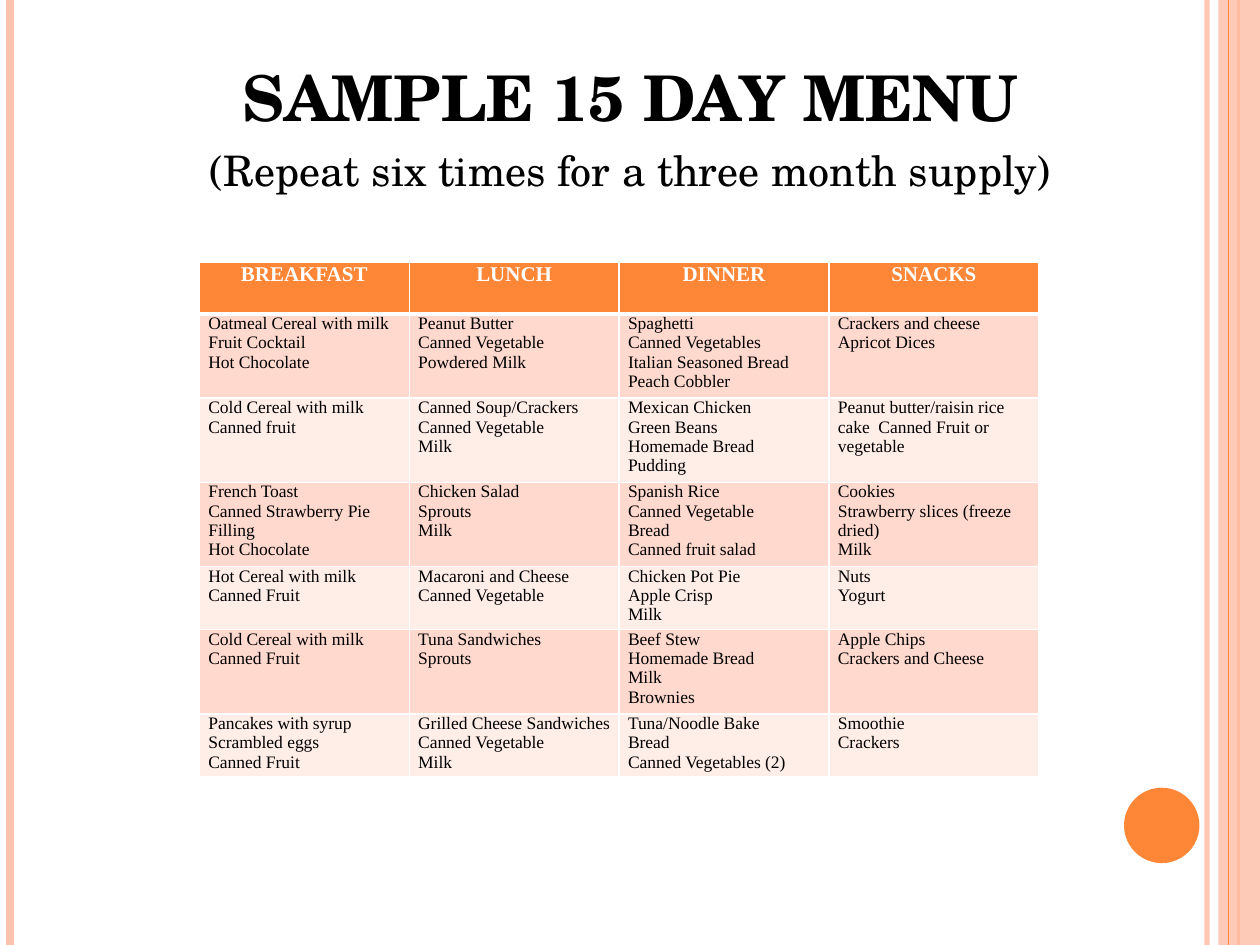
from lxml.etree import SubElement
from pptx import Presentation
from pptx.dml.color import RGBColor
from pptx.enum.shapes import MSO_CONNECTOR, MSO_SHAPE
from pptx.enum.text import PP_ALIGN
from pptx.oxml import parse_xml
from pptx.oxml.ns import nsdecls, qn
from pptx.util import Cm, Pt

HUES = {"orange": "FE8637", "peach": "FEC3AE", "dark": "FFD9CE",
        "light": "FFEDE8", "white": "FFFFFF", "black": "000000"}
HEADS = ["BREAKFAST", "LUNCH", "DINNER", "SNACKS"]
MEALS = [
    ["Oatmeal Cereal with milk|Fruit Cocktail|Hot Chocolate",
     "Peanut Butter|Canned Vegetable|Powdered Milk",
     "Spaghetti|Canned Vegetables|Italian Seasoned Bread|Peach Cobbler",
     "Crackers and cheese|Apricot Dices"],
    ["Cold Cereal with milk|Canned fruit",
     "Canned Soup/Crackers|Canned Vegetable|Milk",
     "Mexican Chicken|Green Beans|Homemade Bread|Pudding",
     "Peanut butter/raisin rice cake  Canned Fruit or vegetable"],
    ["French Toast|Canned Strawberry Pie Filling|Hot Chocolate",
     "Chicken Salad|Sprouts|Milk",
     "Spanish Rice|Canned Vegetable|Bread|Canned fruit salad",
     "Cookies|Strawberry slices (freeze dried)|Milk"],
    ["Hot Cereal with milk|Canned Fruit",
     "Macaroni and Cheese|Canned Vegetable",
     "Chicken Pot Pie|Apple Crisp|Milk",
     "Nuts|Yogurt"],
    ["Cold Cereal with milk|Canned Fruit",
     "Tuna Sandwiches|Sprouts",
     "Beef Stew|Homemade Bread|Milk|Brownies",
     "Apple Chips|Crackers and Cheese"],
    ["Pancakes with syrup|Scrambled eggs|Canned Fruit",
     "Grilled Cheese Sandwiches|Canned Vegetable|Milk",
     "Tuna/Noodle Bake|Bread|Canned Vegetables (2)",
     "Smoothie|Crackers"],
]


class Deck:
    """Hold the menu style and the current slide."""

    def __init__(self, wide, high):
        self.prs = Presentation()
        self.prs.slide_width, self.prs.slide_height = Cm(wide), Cm(high)
        self.high = high
        self.slide = self.prs.slides.add_slide(self.prs.slide_layouts[6])

    def hue(self, name):
        return RGBColor.from_string(HUES[name])

    def paint(self, fill, name):
        fill.solid()
        fill.fore_color.rgb = self.hue(name)

    def fade(self, item, alpha):
        if alpha < 100:
            tint = next(item.element.iter(qn("a:srgbClr")))
            SubElement(tint, qn("a:alpha"), val=str(alpha * 1000))

    def stripe(self, x, name, width, alpha=100):
        line = self.slide.shapes.add_connector(
            MSO_CONNECTOR.STRAIGHT, Cm(x), Cm(0), Cm(x), Cm(self.high))
        line.line.width = Pt(width)
        line.line.color.rgb = self.hue(name)
        SubElement(line.element.spPr, qn("a:effectLst"))
        self.fade(line, alpha)

    def shape(self, kind, box, name, alpha=100):
        item = self.slide.shapes.add_shape(kind, *map(Cm, box))
        item.shadow.inherit = False
        self.paint(item.fill, name)
        item.line.fill.background()
        self.fade(item, alpha)

    def add_run(self, para, text, font, size, name, bold):
        run = para.add_run()
        run.text = text
        run.font.name, run.font.size, run.font.bold = font, Pt(size), bold
        run.font.color.rgb = self.hue(name)

    def title(self, box, lines):
        frame = self.slide.shapes.add_textbox(*map(Cm, box)).text_frame
        frame.word_wrap = True
        for i, (text, size, bold) in enumerate(lines):
            para = frame.add_paragraph() if i else frame.paragraphs[0]
            para.alignment, para.space_before = PP_ALIGN.CENTER, Pt(6)
            self.add_run(para, text, "TeX Gyre Schola", size, "black", bold)

    def edge(self, cell, widths):
        props = cell._tc.get_or_add_tcPr()
        for i, (side, width) in enumerate(zip("LRTB", widths)):
            props.insert(i, parse_xml(
                f'<a:ln{side} {nsdecls("a")} w="{Pt(width)}"><a:solidFill>'
                f'<a:srgbClr val="{HUES["white"]}"/></a:solidFill></a:ln{side}>'))

    def cell(self, cell, text, row):
        head = row == 0
        cell.margin_left = cell.margin_right = Cm(0.18)
        cell.margin_top = cell.margin_bottom = Cm(0)
        self.paint(cell.fill, "orange" if head else "dark" if row % 2 else "light")
        self.edge(cell, (1, 1, 3 if row == 1 else 1, 3 if head else 1))
        size, name = (12, "white") if head else (10, "black")
        frame = cell.text_frame
        for i, part in enumerate(text.split("|")):
            para = frame.add_paragraph() if i else frame.paragraphs[0]
            para.alignment = PP_ALIGN.CENTER if head else PP_ALIGN.LEFT
            self.add_run(para, part, "Times New Roman", size, name, head)

    def table(self, x, y, wide, tall, rows):
        cols = len(rows[0])
        grid = self.slide.shapes.add_table(
            len(rows), cols, Cm(x), Cm(y), Cm(wide * cols), Cm(tall * len(rows))).table
        grid.horz_banding = False
        for i, row in enumerate(rows):
            for j, text in enumerate(row):
                self.cell(grid.cell(i, j), text, i)


def main():
    deck = Deck(25.4, 19.05)
    deck.stripe(24.33, "peach", 3, 93)
    deck.stripe(0.21, "peach", 4.5)
    deck.stripe(24.97, "orange", 1.5)
    deck.shape(MSO_SHAPE.RECTANGLE, (24.56, 0, 0.84, 19.05), "peach", 87)
    deck.stripe(24.77, "orange", 0.75)
    deck.shape(MSO_SHAPE.OVAL, (22.66, 15.88, 1.52, 1.52), "orange")
    deck.title((1.27, 1.06, 22.86, 12.57), [
        ("SAMPLE 15 DAY MENU", 36, True),
        ("(Repeat six times for a three month supply)", 24, False)])
    deck.table(4.02, 5.29, 4.23, 1.04, [HEADS] + MEALS)
    deck.prs.save("out.pptx")


if __name__ == "__main__":
    main()
